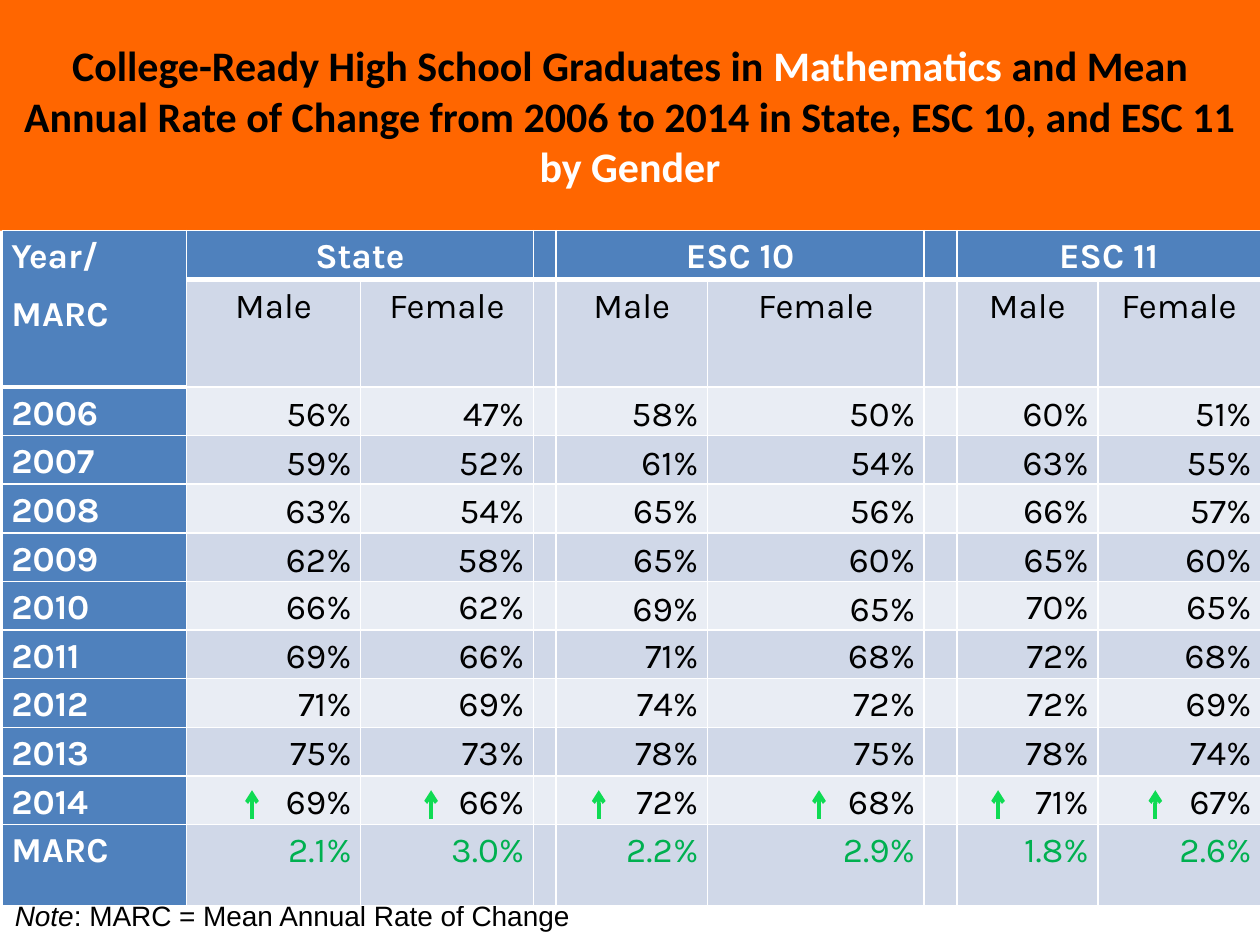
from dataclasses import dataclass

from lxml import etree
from pptx import Presentation
from pptx.dml.color import RGBColor
from pptx.enum.shapes import MSO_CONNECTOR, MSO_SHAPE
from pptx.enum.text import MSO_ANCHOR, PP_ALIGN
from pptx.oxml.ns import qn
from pptx.util import Cm, Pt

LEFT, CENTER, RIGHT = PP_ALIGN.LEFT, PP_ALIGN.CENTER, PP_ALIGN.RIGHT
TOP, MIDDLE, BOTTOM = MSO_ANCHOR.TOP, MSO_ANCHOR.MIDDLE, MSO_ANCHOR.BOTTOM

COLORS = {
    "orange": "FF6600", "header": "4F81BD", "dark_band": "D0D8E8",
    "light_band": "E9EDF4", "white": "FFFFFF", "black": "000000",
    "marc": "00B050", "arrow": "0FDB53",
}

COLUMN_WIDTHS = [3.71, 3.51, 3.48, 0.46, 3.05, 4.37, 0.66, 2.84, 3.28]
ROW_HEIGHTS = [0.99, 1.3] + [0.98] * 9 + [1.63]
REGIONS = {"State": 1, "ESC 10": 4, "ESC 11": 7}  # first column of each region
SPACERS = (3, 6)
VALUE_COLUMNS = [c for first in REGIONS.values() for c in (first, first + 1)]
ARROW_CENTERS = [5.08, 8.69, 12.07, 16.51, 20.12, 23.29]


@dataclass
class YearRow:
    label: str
    values: list[str]
    color: str = "black"


RATES = {
    2006: (56, 47, 58, 50, 60, 51), 2007: (59, 52, 61, 54, 63, 55),
    2008: (63, 54, 65, 56, 66, 57), 2009: (62, 58, 65, 60, 65, 60),
    2010: (66, 62, 69, 65, 70, 65), 2011: (69, 66, 71, 68, 72, 68),
    2012: (71, 69, 74, 72, 72, 69), 2013: (75, 73, 78, 75, 78, 74),
    2014: (69, 66, 72, 68, 71, 67),
}
YEAR_ROWS = [YearRow(str(year), [f"{rate}%" for rate in rates])
             for year, rates in RATES.items()]
YEAR_ROWS.append(YearRow("MARC", ["2.1%", "3.0%", "2.2%", "2.9%", "1.8%", "2.6%"], "marc"))


def rgb(name: str) -> RGBColor:
    return RGBColor.from_string(COLORS[name])


def add_run(paragraph, text: str, *, font: str, size: float, color: str = "black",
            bold: bool = False, italic: bool = False) -> None:
    run = paragraph.add_run()
    run.text = text
    run.font.name, run.font.size = font, Pt(size)
    run.font.bold, run.font.italic = bold, italic
    run.font.color.rgb = rgb(color)


def style_cell(cell, fill: str, top: float = 1, bottom: float = 1) -> None:
    """Give a cell its fill, white borders and margins."""
    cell.margin_left = cell.margin_right = Cm(0.18)
    cell.margin_top = cell.margin_bottom = 0
    properties = cell._tc.get_or_add_tcPr()
    for side, width in (("lnL", 1), ("lnR", 1), ("lnT", top), ("lnB", bottom)):
        border = etree.SubElement(properties, qn(f"a:{side}"), w=str(Pt(width)))
        solid = etree.SubElement(border, qn("a:solidFill"))
        etree.SubElement(solid, qn("a:srgbClr"), val=COLORS["white"])
    cell.fill.solid()
    cell.fill.fore_color.rgb = rgb(fill)


def write_cell(cell, *lines: str, align=LEFT, anchor=TOP, color: str = "white",
               bold: bool = True, before: float = 0, after: float = 0) -> None:
    cell.vertical_anchor = anchor
    frame = cell.text_frame
    for index, line in enumerate(lines):
        paragraph = frame.add_paragraph() if index else frame.paragraphs[0]
        paragraph.alignment, paragraph.line_spacing = align, 1.15
        paragraph.space_before = Pt(before)
        paragraph.space_after = Pt(after if index == len(lines) - 1 else 0)
        add_run(paragraph, line, font="Karla", size=20, color=color, bold=bold)


def add_title(slide) -> None:
    banner = slide.shapes.add_shape(MSO_SHAPE.RECTANGLE, 0, 0, Cm(25.4), Cm(4.65))
    banner.shadow.inherit = False
    banner.fill.solid()
    banner.fill.fore_color.rgb = rgb("orange")
    banner.line.fill.background()
    frame = banner.text_frame
    frame.word_wrap, frame.vertical_anchor = True, MIDDLE
    title = frame.paragraphs[0]
    title.alignment = CENTER
    for text, color in (
        ("College-Ready High School Graduates in ", "black"),
        ("Mathematics ", "white"),
        ("and Mean Annual Rate of Change from 2006 to 2014 in State, "
         "ESC 10, and ESC 11 ", "black"),
        ("by Gender", "white"),
    ):
        add_run(title, text, font="Calibri", size=24, color=color, bold=True)


def add_note(slide) -> None:
    box = slide.shapes.add_textbox(Cm(0.05), Cm(17.98), Cm(25.4), Cm(0.94))
    box.text_frame.word_wrap = True
    note = box.text_frame.paragraphs[0]
    add_run(note, "Note", font="Arial", size=16, italic=True)
    add_run(note, ": MARC = Mean Annual Rate of Change", font="Arial", size=16)


def add_rate_table(slide) -> None:
    table = slide.shapes.add_table(
        len(ROW_HEIGHTS), len(COLUMN_WIDTHS), Cm(0.05), Cm(4.65),
        Cm(sum(COLUMN_WIDTHS)), Cm(sum(ROW_HEIGHTS))).table
    table.first_row = table.horz_banding = False
    for column, width in zip(table.columns, COLUMN_WIDTHS):
        column.width = Cm(width)
    for row, height in zip(table.rows, ROW_HEIGHTS):
        row.height = Cm(height)

    # Fills and borders: blue header row and year column, banded body
    for r in range(len(ROW_HEIGHTS)):
        band = "dark_band" if r % 2 else "light_band"
        for c in range(len(COLUMN_WIDTHS)):
            fill = "header" if r == 0 or c == 0 else band
            rule_row = 1 if c == 0 else 0
            style_cell(table.cell(r, c), fill,
                       top=3 if r == rule_row + 1 else 1,
                       bottom=3 if r == rule_row or r == 0 else 1)

    # Two header rows
    table.cell(0, 0).merge(table.cell(1, 0))
    write_cell(table.cell(0, 0), "Year/", "MARC", before=6, after=6)
    for region, first in REGIONS.items():
        table.cell(0, first).merge(table.cell(0, first + 1))
        write_cell(table.cell(0, first), region, align=CENTER, before=6)
        for offset, gender in enumerate(("Male", "Female")):
            write_cell(table.cell(1, first + offset), gender, align=CENTER,
                       color="black", bold=False, after=6)

    # Yearly rates and the mean annual rate of change
    for r, year in enumerate(YEAR_ROWS, start=2):
        before = 6 if r == 2 else 0
        write_cell(table.cell(r, 0), year.label, before=before)
        for c, value in zip(VALUE_COLUMNS, year.values):
            low = r < 6 or (r == 6 and c in (4, 5))
            write_cell(table.cell(r, c), value, align=RIGHT,
                       anchor=BOTTOM if low else TOP,
                       color=year.color, bold=False, before=before)


def add_up_arrow(slide, x: float) -> None:
    arrow = slide.shapes.add_connector(
        MSO_CONNECTOR.STRAIGHT, Cm(x), Cm(16.51), Cm(x), Cm(15.93))
    arrow.line.color.rgb = rgb("arrow")
    arrow.line.width = Pt(2.25)
    etree.SubElement(arrow.line._get_or_add_ln(), qn("a:tailEnd"), type="arrow")
    etree.SubElement(arrow._element.spPr, qn("a:effectLst"))


def main() -> None:
    presentation = Presentation()
    presentation.slide_width, presentation.slide_height = Cm(25.4), Cm(19.05)
    slide = presentation.slides.add_slide(presentation.slide_layouts[6])
    add_title(slide)
    add_note(slide)
    add_rate_table(slide)
    for x in ARROW_CENTERS:
        add_up_arrow(slide, x)
    presentation.save("out.pptx")


if __name__ == "__main__":
    main()
